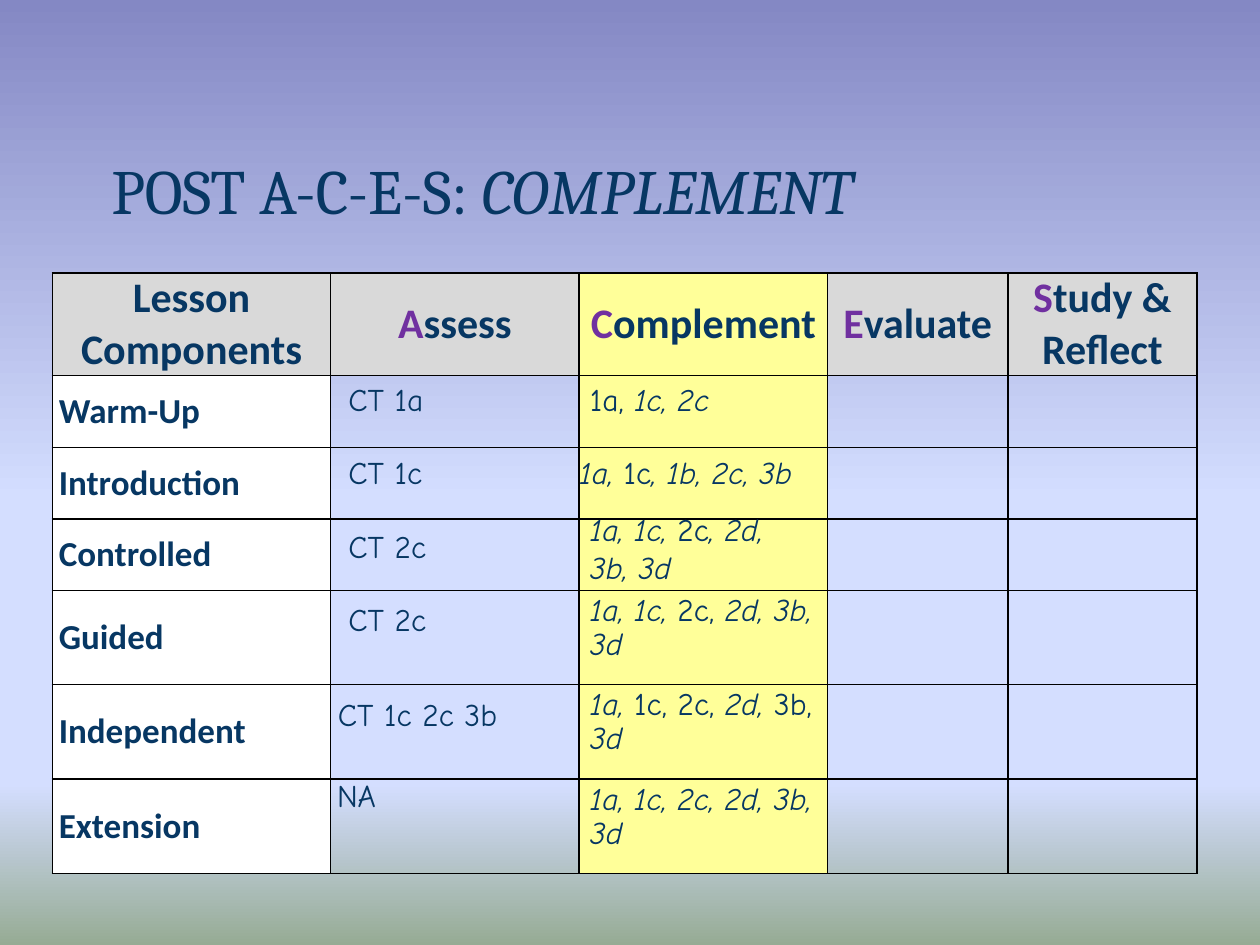
"""Build the lesson-components table slide."""
from lxml.etree import SubElement
from pptx import Presentation
from pptx.dml.color import RGBColor as RGB
from pptx.enum.text import MSO_ANCHOR as Anchor, MSO_AUTO_SIZE as AutoSize, PP_ALIGN as Align
from pptx.oxml.ns import qn
from pptx.util import Pt

COLORS = {"navy": "073763", "purple": "7030A0", "grey": "D9D9D9", "yellow": "FFFF99",
          "white": "FFFFFF", "black": "000000"}
SKY = [(0, "8488C4"), (53, "D4DEFF"), (83, "D4DEFF"), (100, "96AB94")]
COLUMNS = [159, 142, 142, 103, 108]
ROWS = [52.5, 41, 41, 41, 53.5, 54, 54]
HEADERS = ["Lesson Components", "Assess", "Complement", "Evaluate", "Study & Reflect"]
COMPONENTS = ["Warm-Up", "Introduction", "Controlled", "Guided", "Independent", "Extension"]
ASSESS = [("CT 1a", 192, 216, 126), ("CT 1c", 192, 258, 126), ("CT 2c", 192, 300, 126),
          ("CT 2c", 192, 342, 126), ("CT 1c 2c 3b", 186, 396, 144)]
COMPLEMENT = [("1a,* 1c, 2c*", 330, 216, 156), ("*1a, *1c*, 1b, 2c, 3b*", 324, 258, 156),
              ("*1a, 1c, *2c*, 2d,*\n*3b, 3d*", 330, 288, 138),
              ("*1a, 1c,* 2c, *2d, 3b, 3d*", 330, 336, 156),
              ("*1a,* 1c, 2c, *2d,* 3b, *3d*", 330, 390, 156),
              ("*1a, 1c, 2c, 2d, 3b, 3d*", 330, 444, 156)]


def write(frame, text, font="Comic Neue", size=18, bold=False, align=Align.LEFT,
          spacing=None, initial=None):
    """Fill a text frame, with *stars* around italics and an optional initial colour."""
    for index, line in enumerate(text.split("\n")):
        para = frame.paragraphs[0] if index == 0 else frame.add_paragraph()
        para.alignment = align
        para.line_spacing = spacing
        pieces = [(part, number % 2 == 1, "navy") for number, part in enumerate(line.split("*"))]
        if initial:
            pieces = [(line[0], False, initial), (line[1:], False, "navy")]
        for part, italic, color in pieces:
            if part:
                span = para.add_run()
                span.text = part
                span.font.name, span.font.size = font, Pt(size)
                span.font.bold, span.font.italic = bold, italic
                span.font.color.rgb = RGB.from_string(COLORS[color])


class Page:
    """Hold the current slide and its style."""

    def __init__(self, deck):
        """Add a title-only slide."""
        self.slide = deck.slides.add_slide(deck.slide_layouts[5])

    def background(self, stops):
        """Paint a vertical gradient."""
        fill = self.slide.background.fill
        fill.gradient()
        fill.gradient_angle = 270
        stop_list = self.slide.element.find(".//" + qn("a:gsLst"))
        for old in list(stop_list):
            stop_list.remove(old)
        for position, color in stops:
            stop = SubElement(stop_list, qn("a:gs"), pos=str(position * 1000))
            SubElement(stop, qn("a:srgbClr"), val=color)

    def title(self, text, left, top, width, height):
        """Place and format the title."""
        box = self.slide.shapes.title
        box.left, box.top, box.width, box.height = map(Pt, (left, top, width, height))
        frame = box.text_frame
        frame.auto_size, frame.word_wrap = AutoSize.NONE, True
        frame.vertical_anchor = Anchor.BOTTOM
        frame.margin_left = frame.margin_right = Pt(9.6)
        frame.margin_top = frame.margin_bottom = Pt(4.8)
        write(frame, text, font="Cambria", size=36, spacing=0.8)

    def table(self, left, top, columns, rows):
        """Add a bordered table and return it."""
        table = self.slide.shapes.add_table(
            len(rows), len(columns), Pt(left), Pt(top), Pt(sum(columns)), Pt(sum(rows))).table
        table.first_row = table.horz_banding = False
        for column, width in zip(table.columns, columns):
            column.width = Pt(width)
        for row, height in zip(table.rows, rows):
            row.height = Pt(height)
        for cell in table.iter_cells():
            self.border(cell)
            cell.fill.background()
        return table

    def border(self, cell):
        """Draw all four cell edges."""
        properties = cell._tc.get_or_add_tcPr()
        for side in "LRTB":
            line = SubElement(properties, qn(f"a:ln{side}"), w=str(Pt(1)))
            SubElement(SubElement(line, qn("a:solidFill")), qn("a:srgbClr"), val=COLORS["black"])

    def shade(self, cell, color):
        """Fill a cell."""
        cell.fill.solid()
        cell.fill.fore_color.rgb = RGB.from_string(COLORS[color])

    def cell(self, cell, text, anchor=Anchor.MIDDLE, **style):
        """Write in a cell."""
        cell.margin_left = cell.margin_right = Pt(3.6)
        cell.margin_top = cell.margin_bottom = 0
        cell.vertical_anchor = anchor
        write(cell.text_frame, text, **style)

    def note(self, text, left, top, width):
        """Add a text box over the table."""
        lines = text.count("\n") + 1
        height = 51 if lines > 1 else 47 if top > 330 and width == 156 else 27.5
        box = self.slide.shapes.add_textbox(Pt(left), Pt(top), Pt(width), Pt(height))
        box.text_frame.word_wrap = True
        box.text_frame.auto_size = AutoSize.SHAPE_TO_FIT_TEXT
        write(box.text_frame, text, spacing=0.9 if lines == 1 else None)


def main():
    """Build and save the deck."""
    deck = Presentation()
    deck.slide_width, deck.slide_height = Pt(720), Pt(540)
    page = Page(deck)
    page.background(SKY)
    page.title("POST A-C-E-S: *COMPLEMENT*", 54, 38, 612, 96)
    table = page.table(30, 156, COLUMNS, ROWS)
    for column, header in enumerate(HEADERS):
        cell = table.cell(0, column)
        page.shade(cell, "yellow" if header == "Complement" else "grey")
        page.cell(cell, header, font="Calibri", size=24, bold=True, align=Align.CENTER,
                  initial="purple" if column else None)
    for row, component in enumerate(COMPONENTS, 1):
        page.shade(table.cell(row, 0), "white")
        page.shade(table.cell(row, 2), "yellow")
        page.cell(table.cell(row, 0), component, font="Calibri", size=20, bold=True)
    page.cell(table.cell(6, 1), "NA", anchor=Anchor.TOP)
    for entry in ASSESS + COMPLEMENT:
        page.note(*entry)
    deck.save("out.pptx")


if __name__ == "__main__":
    main()
